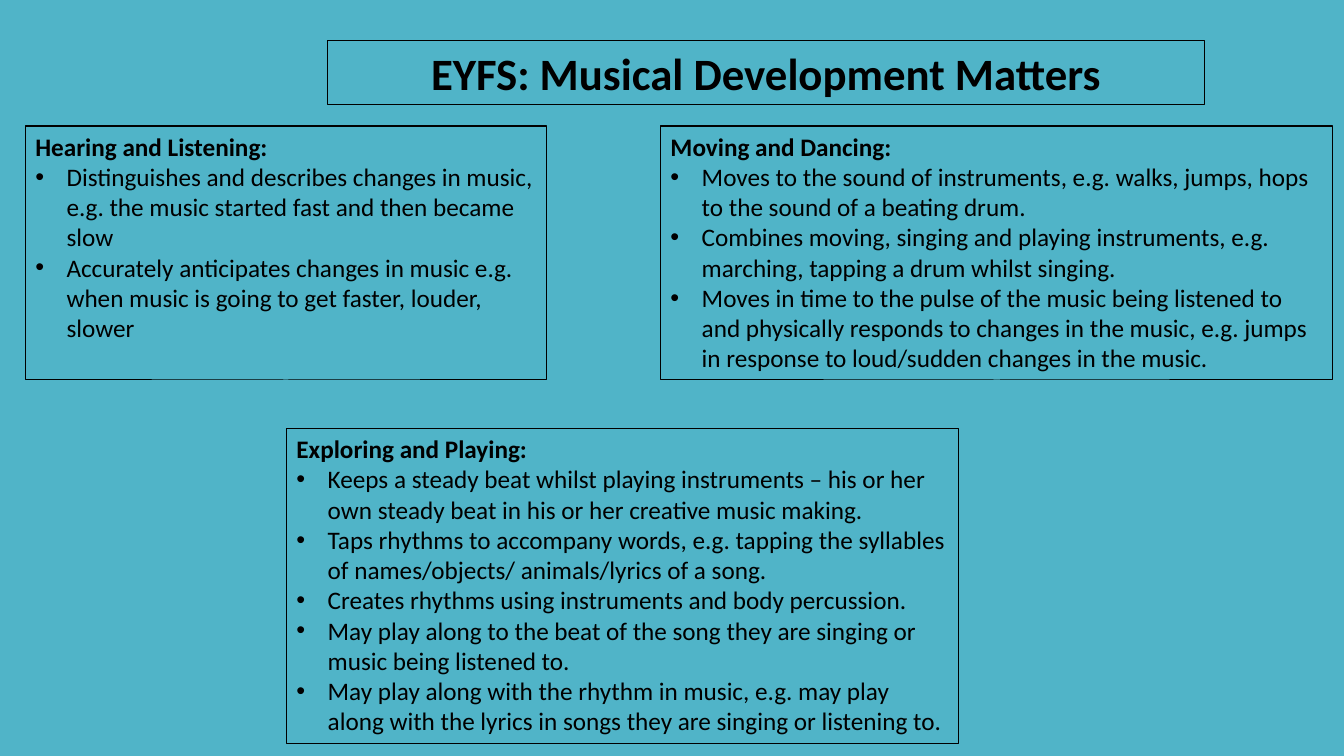
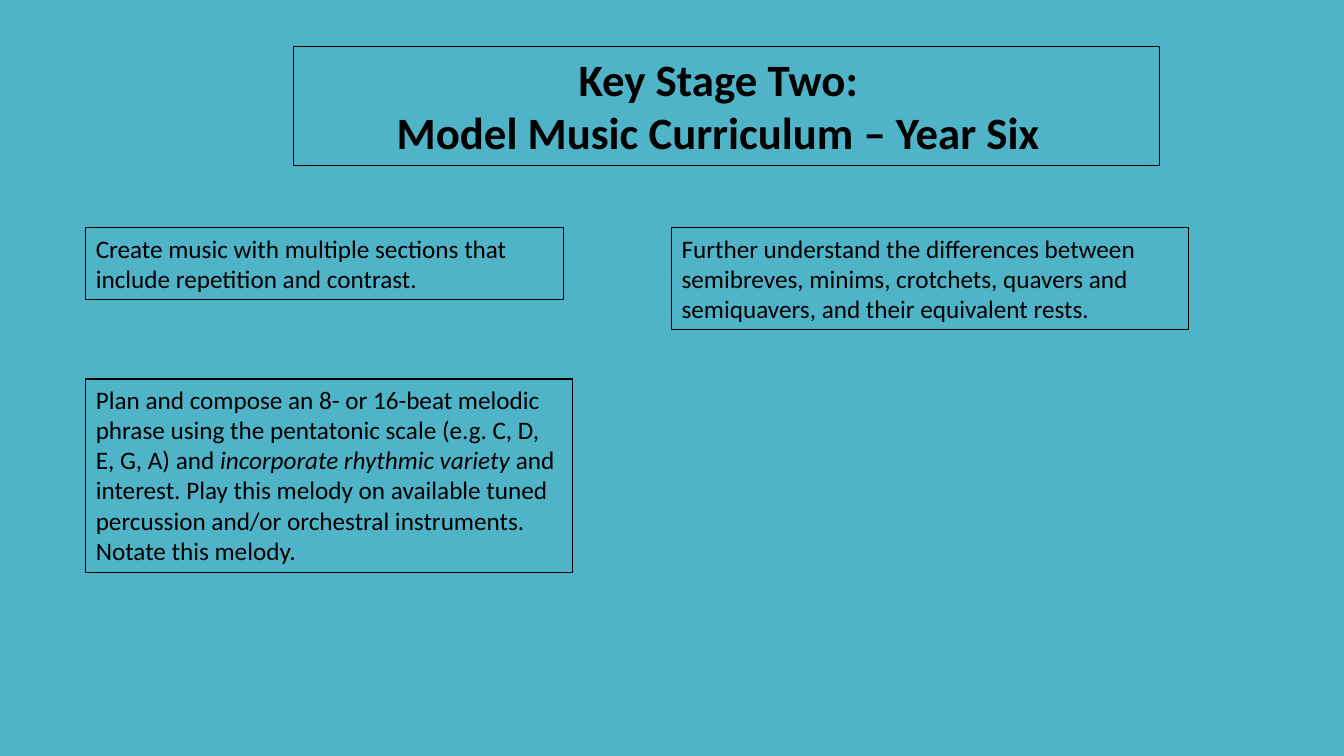
import dataclasses

import pptx
import pptx.dml.color
import pptx.enum.text
import pptx.oxml.ns
import pptx.util
from lxml import etree


@dataclasses.dataclass(frozen=True)
class Theme:
    background: str = "50B4C8"
    ink: str = "000000"
    font: str = "Calibri"
    bullet_font: str = "Arial"
    title_size: int = 32
    body_size: int = 18
    outline: float = 0.75
    inset: int = 10
    bullet_indent: int = 31


class MusicDeck:
    """Builds outlined text slides in one style, at 100 px to the inch."""

    EMU_PER_PX = 9144
    COMPARISON_LAYOUT = 4

    def __init__(self, theme):
        self.theme = theme
        self.deck = pptx.Presentation()
        self.deck.slide_width = self.px(1333)
        self.deck.slide_height = self.px(750)
        fill = self.deck.slide_master.background.fill
        fill.solid()
        fill.fore_color.rgb = self.color(theme.background)

    def px(self, length):
        return pptx.util.Emu(length * self.EMU_PER_PX)

    def color(self, value):
        return pptx.dml.color.RGBColor.from_string(value)

    def new_slide(self):
        layout = self.deck.slide_layouts[self.COMPARISON_LAYOUT]
        self.slide = self.deck.slides.add_slide(layout)
        self.free_bodies = list(self.slide.placeholders)[1:]

    def outline_box(self, box, at, right_inset=None):
        box.left, box.top, box.width, box.height = map(self.px, at)
        box.fill.background()
        box.line.color.rgb = self.color(self.theme.ink)
        box.line.width = pptx.util.Pt(self.theme.outline)
        frame = box.text_frame
        frame.word_wrap = True
        frame.auto_size = pptx.enum.text.MSO_AUTO_SIZE.NONE
        frame.vertical_anchor = pptx.enum.text.MSO_ANCHOR.TOP
        frame.margin_left = self.px(self.theme.inset)
        frame.margin_right = self.px(right_inset or self.theme.inset)
        frame.margin_top = frame.margin_bottom = self.px(self.theme.inset // 2)
        return frame

    def format_para(self, para, size, bold=False, bullet=False, centred=False):
        align = pptx.enum.text.PP_ALIGN
        para.alignment = align.CENTER if centred else align.LEFT
        para.line_spacing = 1.0
        para.space_before = para.space_after = pptx.util.Pt(0)
        for span in para.runs:
            span.font.name = self.theme.font
            span.font.size = pptx.util.Pt(size)
            span.font.bold = bold
            span.font.color.rgb = self.color(self.theme.ink)
        self.set_bullet(para, bullet)

    def set_bullet(self, para, bullet):
        properties = para._p.get_or_add_pPr()
        indent = self.px(self.theme.bullet_indent) if bullet else 0
        properties.set("marL", str(indent))
        properties.set("indent", str(-indent))
        qualified = pptx.oxml.ns.qn
        if bullet:
            font = etree.SubElement(properties, qualified("a:buFont"))
            font.set("typeface", self.theme.bullet_font)
            etree.SubElement(properties, qualified("a:buChar")).set("char", "•")
        else:
            etree.SubElement(properties, qualified("a:buNone"))

    def title(self, at, text, right_inset=None):
        frame = self.outline_box(self.slide.shapes.title, at, right_inset)
        frame.text = text
        for para in frame.paragraphs:
            self.format_para(para, self.theme.title_size, bold=True, centred=True)

    def list_panel(self, at, heading, items):
        frame = self.outline_box(self.free_bodies.pop(0), at)
        frame.text = "\n".join([heading, *items])
        for index, para in enumerate(frame.paragraphs):
            self.format_para(para, self.theme.body_size,
                             bold=index == 0, bullet=index > 0)

    def statement(self, at, text, emphasis=""):
        frame = self.outline_box(self.free_bodies.pop(0), at)
        para = frame.paragraphs[0]
        before, italic, after = text.partition(emphasis) if emphasis else (text, "", "")
        for part in filter(None, (before, italic, after)):
            span = para.add_run()
            span.text = part
            span.font.italic = part == emphasis
        self.format_para(para, self.theme.body_size)

    def finish_slide(self):
        for box in self.free_bodies:
            box.element.getparent().remove(box.element)

    def save(self):
        self.deck.save("out.pptx")


def early_years(music):
    music.new_slide()
    music.title((325, 40, 870, 64), "EYFS: Musical Development Matters")
    music.list_panel((25, 125, 517, 252), "Hearing and Listening:", [
        "Distinguishes and describes changes in music, e.g. the music started "
        "fast and then became slow",
        "Accurately anticipates changes in music e.g. when music is going to "
        "get faster, louder, slower",
    ])
    music.list_panel((655, 125, 667, 252), "Moving and Dancing:", [
        "Moves to the sound of instruments, e.g. walks, jumps, hops to the "
        "sound of a beating drum.",
        "Combines moving, singing and playing instruments, e.g. marching, "
        "tapping a drum whilst singing.",
        "Moves in time to the pulse of the music being listened to and "
        "physically responds to changes in the music, e.g. jumps in response "
        "to loud/sudden changes in the music.",
    ])
    music.list_panel((284, 425, 667, 313), "Exploring and Playing:", [
        "Keeps a steady beat whilst playing instruments – his or her own "
        "steady beat in his or her creative music making.",
        "Taps rhythms to accompany words, e.g. tapping the syllables of "
        "names/objects/ animals/lyrics of a song.",
        "Creates rhythms using instruments and body percussion.",
        "May play along to the beat of the song they are singing or music "
        "being listened to.",
        "May play along with the rhythm in music, e.g. may play along with "
        "the lyrics in songs they are singing or listening to.",
    ])
    music.finish_slide()


def year_six(music):
    music.new_slide()
    music.title((291, 46, 859, 118),
                "Key Stage Two:\nModel Music Curriculum – Year Six",
                right_inset=26)
    music.statement((85, 226, 474, 71),
                    "Create music with multiple sections that include "
                    "repetition and contrast.")
    music.statement((666, 226, 513, 101),
                    "Further understand the differences between semibreves, "
                    "minims, crotchets, quavers and semiquavers, and their "
                    "equivalent rests.")
    music.statement((85, 376, 483, 192),
                    "Plan and compose an 8- or 16-beat melodic phrase using the "
                    "pentatonic scale (e.g. C, D, E, G, A) and incorporate "
                    "rhythmic variety and interest. Play this melody on "
                    "available tuned percussion and/or orchestral instruments. "
                    "Notate this melody.",
                    emphasis="incorporate rhythmic variety")
    music.finish_slide()


def main():
    music = MusicDeck(Theme())
    early_years(music)
    year_six(music)
    music.save()


if __name__ == "__main__":
    main()
